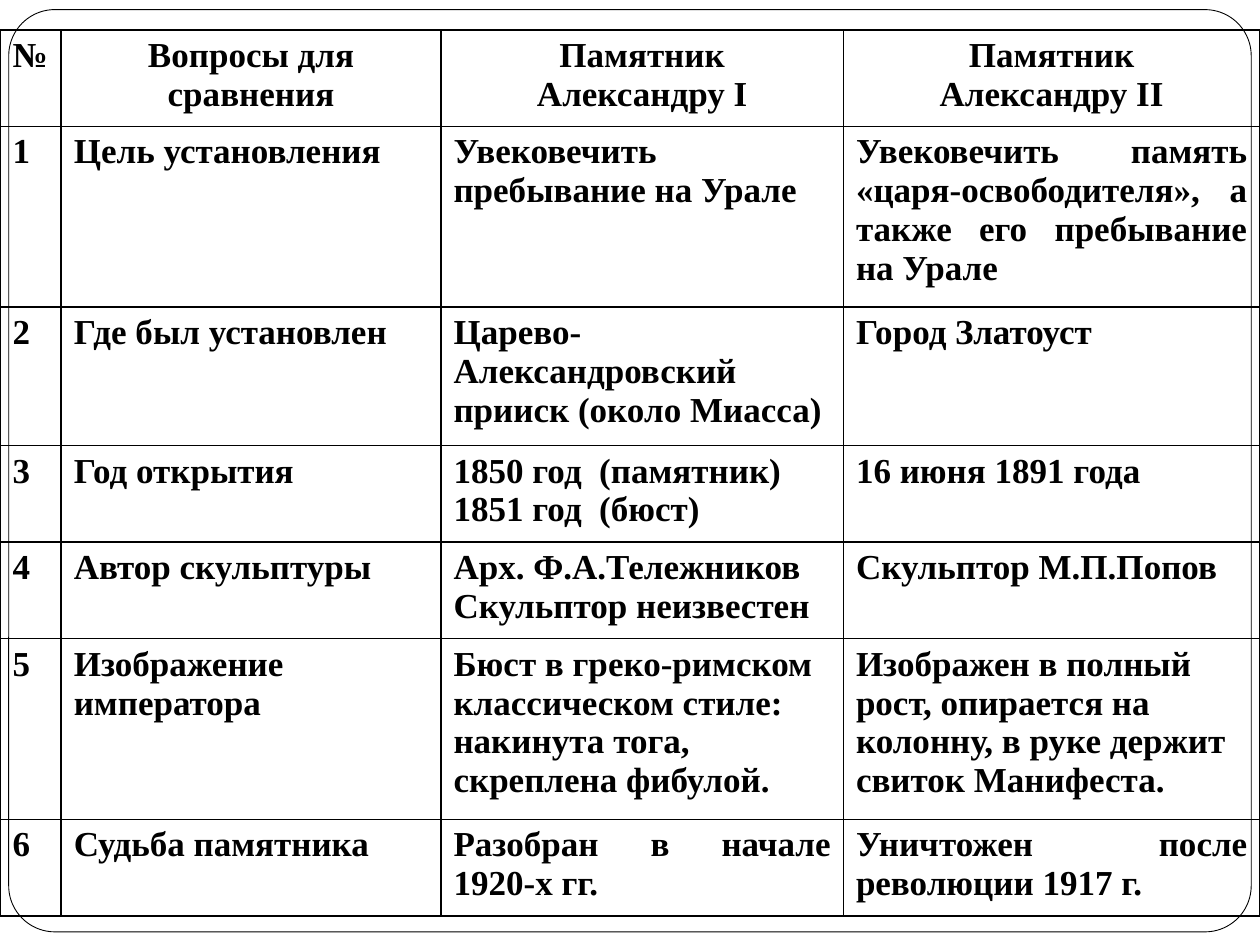
from dataclasses import dataclass

from lxml import etree
from pptx import Presentation
from pptx import util as u
from pptx.dml.color import RGBColor
from pptx.enum import shapes, text
from pptx.oxml import ns


@dataclass(frozen=True)
class Theme:
    ink: str = "000000"
    paper: str = "FFFFFF"
    font: str = "Times New Roman"
    body_size: float = 20
    frame_line: float = 0.5
    grid_line: float = 1


class SlideBuilder:
    def __init__(self, slide, theme):
        self.slide = slide
        self.theme = theme

    def frame(self, left, top, width, height, rounding):
        border = self.slide.shapes.add_shape(
            shapes.MSO_SHAPE.ROUNDED_RECTANGLE,
            u.Pt(left), u.Pt(top), u.Pt(width), u.Pt(height))
        border.adjustments[0] = rounding
        border.shadow.inherit = False
        border.fill.solid()
        border.fill.fore_color.rgb = RGBColor.from_string(self.theme.paper)
        border.line.color.rgb = RGBColor.from_string(self.theme.ink)
        border.line.width = u.Pt(self.theme.frame_line)

    def table(self, left, top, widths, heights, rows, alignment_of):
        grid = self.slide.shapes.add_table(
            len(rows), len(widths), u.Pt(left), u.Pt(top),
            u.Pt(sum(widths)), u.Pt(sum(heights))).table
        grid.first_row = grid.horz_banding = False
        for column, width in zip(grid.columns, widths):
            column.width = u.Pt(width)
        for r, (height, answers) in enumerate(zip(heights, rows)):
            grid.rows[r].height = u.Pt(height)
            for c, answer in enumerate(answers):
                self.cell(grid.cell(r, c), answer, alignment_of(r, c))

    def cell(self, cell, answer, alignment):
        for i, line in enumerate(answer.split("\n")):
            paragraphs = cell.text_frame.paragraphs
            paragraph = cell.text_frame.add_paragraph() if i else paragraphs[0]
            paragraph.alignment = alignment
            run = paragraph.add_run()
            run.text = line
            run.font.name = self.theme.font
            run.font.size = u.Pt(self.theme.body_size)
            run.font.bold = True
            run.font.color.rgb = RGBColor.from_string(self.theme.ink)
        self.cell_borders(cell)
        cell.fill.background()

    def cell_borders(self, cell):
        properties = cell._tc.get_or_add_tcPr()
        for side in ("a:lnL", "a:lnR", "a:lnT", "a:lnB"):
            edge = etree.SubElement(properties, ns.qn(side),
                                    w=str(u.Pt(self.theme.grid_line)))
            paint = etree.SubElement(edge, ns.qn("a:solidFill"))
            etree.SubElement(paint, ns.qn("a:srgbClr"), val=self.theme.ink)


COMPARISON = [
    ("№", "Вопросы для сравнения",
     "Памятник\nАлександру I", "Памятник\nАлександру II"),
    ("1", "Цель установления", "Увековечить пребывание на Урале",
     "Увековечить память «царя-освободителя», а также его пребывание на Урале"),
    ("2", "Где был установлен",
     "Царево-Александровский прииск (около Миасса)", "Город Златоуст"),
    ("3", "Год открытия", "1850 год  (памятник)\n1851 год  (бюст)",
     "16 июня 1891 года"),
    ("4", "Автор скульптуры", "Арх. Ф.А.Тележников\nСкульптор неизвестен",
     "Скульптор М.П.Попов"),
    ("5", "Изображение императора",
     "Бюст в греко-римском классическом стиле: накинута тога, "
     "скреплена фибулой.",
     "Изображен в полный рост, опирается на колонну, в руке держит "
     "свиток Манифеста."),
    ("6", "Судьба памятника", "Разобран в начале 1920-х гг.",
     "Уничтожен после революции 1917 г."),
]
COLUMN_WIDTHS = [35, 217, 230, 238]
SHORT, MEDIUM, TALL = 55.2, 79.2, 103.2
ROW_HEIGHTS = [SHORT, TALL, MEDIUM, SHORT, SHORT, TALL, SHORT]
PORTRAYAL_ROW = 5


def comparison_alignment(row, column):
    if row == 0 and column > 0:
        return text.PP_ALIGN.CENTER
    if row == PORTRAYAL_ROW and column > 1:
        return text.PP_ALIGN.LEFT
    return text.PP_ALIGN.JUSTIFY


def main():
    deck = Presentation()
    deck.slide_width, deck.slide_height = u.Pt(720), u.Pt(540)
    builder = SlideBuilder(deck.slides.add_slide(deck.slide_layouts[6]), Theme())
    builder.frame(5, 5.5, 710, 527, 0.05)
    builder.table(0, 17, COLUMN_WIDTHS, ROW_HEIGHTS, COMPARISON,
                  comparison_alignment)
    deck.save("out.pptx")


if __name__ == "__main__":
    main()
